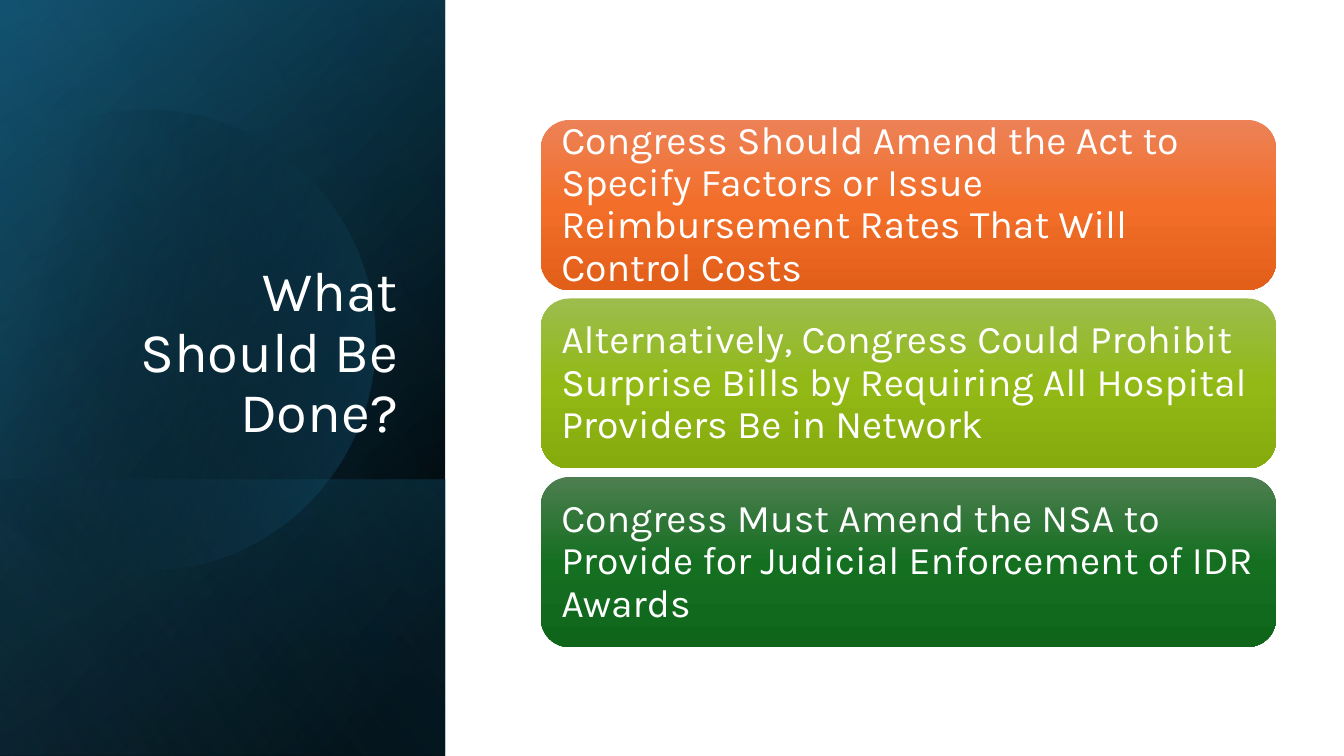
from lxml import etree
from pptx import Presentation
from pptx.dml.color import RGBColor
from pptx.enum.shapes import MSO_SHAPE
from pptx.enum.text import MSO_ANCHOR, MSO_AUTO_SIZE, PP_ALIGN
from pptx.oxml.ns import qn
from pptx.util import Emu, Pt

RECTANGLE, CHORD = MSO_SHAPE.RECTANGLE, MSO_SHAPE.CHORD
ROUNDED = MSO_SHAPE.ROUNDED_RECTANGLE
MIDDLE, BOTTOM = MSO_ANCHOR.MIDDLE, MSO_ANCHOR.BOTTOM
LEFT, RIGHT = PP_ALIGN.LEFT, PP_ALIGN.RIGHT
NO_AUTOFIT = MSO_AUTO_SIZE.NONE

FONT = "Karla"
COLORS = {
    "white": "FFFFFF", "black": "000000", "deep": "104862", "teal": "156082", "sky": "46B1E1",
    "orange_light": "ED8257", "orange": "F26E29", "orange_dark": "E25F1A",
    "lime_light": "9CBD4E", "lime": "92B916", "lime_dark": "85AB0D",
    "green_light": "4D7E50", "green": "156F21", "green_dark": "0F661B",
}

HEADING = "What Should Be Done?"
PROPOSALS = [
    ("Congress Should Amend the Act to Specify Factors or Issue Reimbursement Rates "
     "That Will Control Costs", "orange"),
    ("Alternatively, Congress Could Prohibit Surprise Bills by Requiring All Hospital "
     "Providers Be in Network", "lime"),
    ("Congress Must Amend the NSA to Provide for Judicial Enforcement of IDR Awards", "green"),
]

SLIDE_SIZE = (1344, 756)
SIDEBAR_WIDTH = 445
HEADING_BOX = (64, 186, 344, 264)
CARD_LEFT, CARD_WIDTH, CARD_HEIGHT = 541, 735, 170
FIRST_CARD_TOP, LAST_CARD_TOP = 120, 477
CARD_INSET = 12

LOWER_LAYERS = [
    (0, 756, 50, [(8, "black", 100), (100, "deep", 100)]),
    (0, 756, 30, [(0, "black", 0), (99, "teal", 46)]),
    (480, 276, 130, [(2, "teal", 29), (100, "black", 30)]),
]
TOP_LAYER = (0, 756, 120, [(0, "black", 0), (99, "sky", 11)])
GLOW_CENTER, GLOW_RADIUS, GLOW_SPAN = (145, 340), 230, 134
GLOW_ANGLE, GLOW_STOPS = 14, [(29, "black", 0), (100, "teal", 43)]


def px(value):
    return Emu(round(value * 914400 / 100.8))


def paint(shape, angle, stops):
    shape.shadow.inherit = False
    shape.line.fill.background()
    shape.fill.gradient()
    gradient = shape._element.spPr.find(qn("a:gradFill"))
    for child in list(gradient):
        gradient.remove(child)
    stop_list = etree.SubElement(gradient, qn("a:gsLst"))
    for position, color, opacity in stops:
        stop = etree.SubElement(stop_list, qn("a:gs"), pos=str(position * 1000))
        rgb = etree.SubElement(stop, qn("a:srgbClr"), val=COLORS[color])
        if opacity < 100:
            etree.SubElement(rgb, qn("a:alpha"), val=str(opacity * 1000))
    etree.SubElement(gradient, qn("a:lin"), ang=str(angle * 60000), scaled="0")


def add_layer(shapes, top, height, angle, stops):
    left = (SIDEBAR_WIDTH - height) / 2
    turned_top = top + (height - SIDEBAR_WIDTH) / 2
    layer = shapes.add_shape(RECTANGLE, px(left), px(turned_top), px(height), px(SIDEBAR_WIDTH))
    layer.rotation = 90
    layer._element.spPr.xfrm.set("flipH", "1")
    paint(layer, angle, stops)


def add_glow(shapes):
    left, top = (px(center - GLOW_RADIUS) for center in GLOW_CENTER)
    glow = shapes.add_shape(CHORD, left, top, px(2 * GLOW_RADIUS), px(2 * GLOW_RADIUS))
    for index, degrees in enumerate((360 - GLOW_SPAN, GLOW_SPAN)):
        glow.adjustments[index] = degrees * 0.6
    paint(glow, GLOW_ANGLE, GLOW_STOPS)


def write(frame, text, size, align, anchor):
    frame.word_wrap = True
    frame.auto_size = NO_AUTOFIT
    frame.vertical_anchor = anchor
    paragraph = frame.paragraphs[0]
    paragraph.alignment = align
    paragraph.line_spacing = 0.9
    run = paragraph.add_run()
    run.text = text
    run.font.name = FONT
    run.font.size = Pt(size)
    run.font.color.rgb = RGBColor.from_string(COLORS["white"])


def add_card(shapes, index, proposal, hue):
    pitch = (LAST_CARD_TOP - FIRST_CARD_TOP) / (len(PROPOSALS) - 1)
    top = FIRST_CARD_TOP + index * pitch
    card = shapes.add_shape(ROUNDED, px(CARD_LEFT), px(top), px(CARD_WIDTH), px(CARD_HEIGHT))
    paint(card, 90, [(0, hue + "_light", 100), (50, hue, 100), (100, hue + "_dark", 100)])
    frame = card.text_frame
    frame.margin_left = frame.margin_right = px(CARD_INSET)
    frame.margin_top = frame.margin_bottom = 0
    write(frame, proposal, 28, LEFT, MIDDLE)


def main():
    deck = Presentation()
    deck.slide_width, deck.slide_height = map(px, SLIDE_SIZE)
    shapes = deck.slides.add_slide(deck.slide_layouts[5]).shapes

    for layer in LOWER_LAYERS:
        add_layer(shapes, *layer)
    add_glow(shapes)
    add_layer(shapes, *TOP_LAYER)

    heading = shapes.title
    heading.left, heading.top, heading.width, heading.height = map(px, HEADING_BOX)
    write(heading.text_frame, HEADING, 40, RIGHT, BOTTOM)
    shapes._spTree.append(heading._element)

    for index, (proposal, hue) in enumerate(PROPOSALS):
        add_card(shapes, index, proposal, hue)

    deck.save("out.pptx")


if __name__ == "__main__":
    main()
